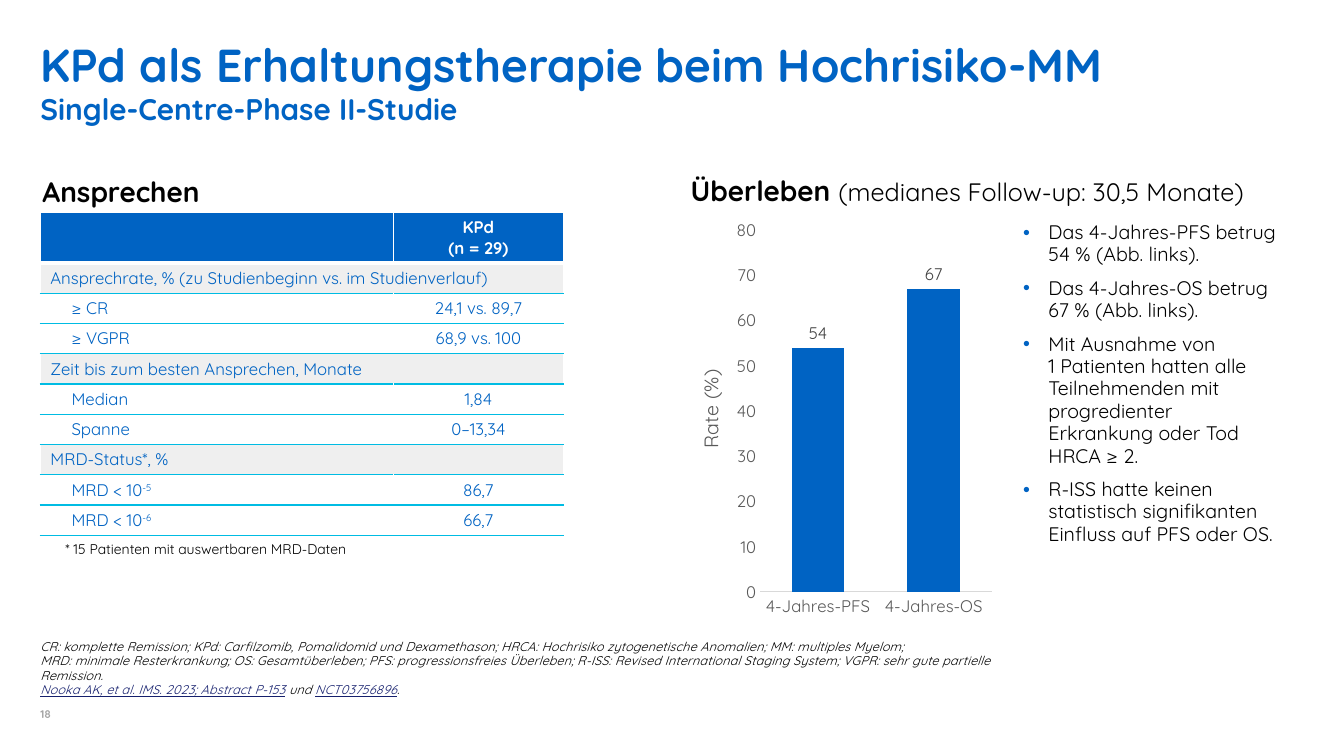
from dataclasses import dataclass

from lxml import etree
from pptx import Presentation
from pptx.chart.data import CategoryChartData
from pptx.dml.color import RGBColor
from pptx.enum import chart as ch, text as t
from pptx.oxml import parse_xml
from pptx.oxml.ns import nsdecls, qn
from pptx.util import Inches, Pt


@dataclass(frozen=True)
class Theme:
    font: str = "Quicksand"
    blue: str = "0063C3"
    cyan: str = "00BCE3"
    link: str = "151F6D"
    black: str = "000000"
    white: str = "FFFFFF"
    band: str = "EFEFEF"
    rule: str = "7F7F7F"
    axis: str = "595959"
    axis_line: str = "D9D9D9"
    label: str = "404040"
    number: str = "A6A6A6"
    title: float = 33
    subtitle: float = 21.3
    heading: float = 20
    heading_note: float = 18
    body: float = 14
    small: float = 12
    note: float = 10
    footnote: float = 9
    page: float = 8


TH = Theme()

RESPONSE = [
    ("Ansprechrate, % (zu Studienbeginn vs. im Studienverlauf)",),
    ("≥ CR", "24,1 vs. 89,7"),
    ("≥ VGPR", "68,9 vs. 100"),
    ("Zeit bis zum besten Ansprechen, Monate",),
    ("Median", "1,84"),
    ("Spanne", "0–13,34"),
    ("MRD-Status*, %",),
    ("MRD < 10^-5", "86,7"),
    ("MRD < 10^-6", "66,7"),
]
FINDINGS = [
    "Das 4-Jahres-PFS betrug 54 % (Abb. links).",
    "Das 4-Jahres-OS betrug 67 % (Abb. links).",
    "Mit Ausnahme von\n1 Patienten hatten alle Teilnehmenden mit progredienter "
    "Erkrankung oder Tod HRCA ≥ 2.",
    "R-ISS hatte keinen statistisch signifikanten Einfluss auf PFS oder OS.",
]
ABBREVIATIONS = (
    "CR: komplette Remission; KPd: Carfilzomib, Pomalidomid und Dexamethason; "
    "HRCA: Hochrisiko zytogenetische Anomalien; MM: multiples Myelom;\n"
    "MRD: minimale Resterkrankung; OS: Gesamtüberleben; PFS: progressionsfreies "
    "Überleben; R-ISS: Revised International Staging System; "
    "VGPR: sehr gute partielle Remission."
)


def style(font, size, color, bold=False):
    font.name, font.size, font.bold = TH.font, Pt(size), bold
    font.color.rgb = RGBColor.from_string(color)


def write(p, content, size, color=TH.black, bold=False):
    """Append text to a paragraph, with line breaks, and return its runs."""
    runs = []
    for i, line in enumerate(content.split("\n")):
        if i:
            p.add_line_break()
        r = p.add_run()
        r.text = line
        style(r.font, size, color, bold)
        runs.append(r)
    return runs


def text_box(s, at, anchor=t.MSO_ANCHOR.TOP, inset=(0, 0), wrap=True):
    tf = s.shapes.add_textbox(*map(Inches, at)).text_frame
    tf.word_wrap, tf.vertical_anchor = wrap, anchor
    tf.margin_left = tf.margin_right = Inches(inset[0])
    tf.margin_top = tf.margin_bottom = Inches(inset[1])
    return tf


def add_title(s):
    p = text_box(s, (0.4, 0.4, 12.53, 0.91)).paragraphs[0]
    p.line_spacing = 0.95
    write(p, "KPd als Erhaltungstherapie beim Hochrisiko-MM", TH.title, TH.blue, True)
    p.add_line_break()
    write(p, "Single-Centre-Phase II-Studie", TH.subtitle, TH.blue, True)


def add_heading(s, at, heading, note=""):
    p = text_box(s, at, t.MSO_ANCHOR.MIDDLE, (0.13, 0.07), False).paragraphs[0]
    write(p, heading, TH.heading, bold=True)
    if note:
        write(p, note, TH.heading_note)


def set_borders(cell, **edges):
    """Draw cell edges, given in the order L, R, T, B as (colour, points)."""
    tc_pr = cell._tc.get_or_add_tcPr()
    for edge, (color, width) in edges.items():
        tc_pr.append(parse_xml(
            f'<a:ln{edge} {nsdecls("a")} w="{Pt(width)}"><a:solidFill>'
            f'<a:srgbClr val="{color}"/></a:solidFill></a:ln{edge}>'))


def fill_cell(cell, color=None):
    cell.vertical_anchor = t.MSO_ANCHOR.MIDDLE
    cell.margin_top = cell.margin_bottom = Inches(0.04)
    if color:
        cell.fill.solid()
        cell.fill.fore_color.rgb = RGBColor.from_string(color)
    else:
        cell.fill.background()


def add_response_table(s):
    frame = s.shapes.add_table(len(RESPONSE) + 1, 2, Inches(0.4), Inches(2.11),
                               Inches(5.19), Inches(3.2))
    tbl = frame.table
    tbl.horz_banding = False
    for col, width in zip(tbl.columns, (3.5, 1.69)):
        col.width = Inches(width)
    for i, row in enumerate(tbl.rows):
        row.height = Inches(0.3 if i else 0.5)

    thin, thick, line = (TH.white, 1), (TH.white, 3), (TH.cyan, 1)
    for cell in tbl.rows[0].cells:
        set_borders(cell, L=thin, R=thin, T=thin, B=thick)
        fill_cell(cell, TH.blue)
    tf = tbl.cell(0, 1).text_frame
    tf.text = "KPd\n(n = 29)"
    for p in tf.paragraphs:
        p.alignment = t.PP_ALIGN.CENTER
        style(p.runs[0].font, TH.small, TH.white, True)

    for i, (label, *value) in enumerate(RESPONSE, 1):
        name, result = tbl.rows[i].cells
        top = line if i > 1 else thick
        middle = {"R": (TH.rule, 0.75)} if value else {}
        set_borders(name, **middle, T=top, B=line)
        set_borders(result, T=top, B=line)
        for cell in (name, result):
            fill_cell(cell, None if value else TH.band)
        p = name.text_frame.paragraphs[0]
        base, _, exponent = label.partition("^")
        write(p, base, TH.small, TH.blue)
        if exponent:
            r = write(p, exponent, TH.small, TH.blue)[0]
            r.font._element.set("baseline", "30000")
        if value:
            p._p.get_or_add_pPr().set("marL", str(Inches(0.21)))
            p = result.text_frame.paragraphs[0]
            p.alignment = t.PP_ALIGN.CENTER
            write(p, value[0], TH.small, TH.blue)
        else:
            name.merge(result)


def layout_xml(**values):
    """Manual chart layout; a width makes it the inner plot area."""
    target = '<c:layoutTarget val="inner"/>' if "w" in values else ""
    modes = '<c:xMode val="edge"/><c:yMode val="edge"/>'
    parts = "".join(f'<c:{k} val="{v}"/>' for k, v in values.items())
    return parse_xml(f'<c:layout {nsdecls("c")}><c:manualLayout>{target}{modes}'
                     f'{parts}</c:manualLayout></c:layout>')


def add_survival_chart(s):
    data = CategoryChartData()
    data.categories = ["4-Jahres-PFS", "4-Jahres-OS"]
    data.add_series("Rate (%)", (54, 67))
    chart = s.shapes.add_chart(ch.XL_CHART_TYPE.COLUMN_CLUSTERED, Inches(6.71),
                               Inches(2.12), Inches(3.19), Inches(4.08), data).chart
    chart.has_legend = chart.has_title = False
    style(chart.font, TH.small, TH.axis)

    plot = chart.plots[0]
    plot.gap_width, plot.overlap, plot.vary_by_categories = 120, -27, False
    fill = plot.series[0].format.fill
    fill.solid()
    fill.fore_color.rgb = RGBColor.from_string(TH.blue)
    plot.has_data_labels = True
    labels = plot.data_labels
    labels.show_value, labels.position = True, ch.XL_LABEL_POSITION.OUTSIDE_END
    style(labels.font, TH.small, TH.label)

    cat, val = chart.category_axis, chart.value_axis
    for axis in (cat, val):
        axis.major_tick_mark = axis.minor_tick_mark = ch.XL_TICK_MARK.NONE
        axis.has_major_gridlines = False
        style(axis.tick_labels.font, TH.small, TH.axis)
    cat.format.line.color.rgb = RGBColor.from_string(TH.axis_line)
    cat.format.line.width = Pt(0.75)
    val.format.line.fill.background()
    val.minimum_scale, val.maximum_scale, val.major_unit = 0, 80, 10
    title = val.axis_title
    write(title.text_frame.paragraphs[0], "Rate (%)", TH.body, TH.axis)

    area = chart._chartSpace.chart.plotArea
    title_xml = title._element
    for parent, layout in ((area, layout_xml(x=0.26, y=0.04, w=0.72, h=0.88)),
                           (title_xml, layout_xml(x=0.05, y=0.37))):
        for old in parent.findall(qn("c:layout")):
            parent.remove(old)
        parent.insert(0 if parent is area else 1, layout)


def add_findings(s):
    tf = text_box(s, (10.05, 2.15, 2.74, 3.5), inset=(0.1, 0.05))
    for i, finding in enumerate(FINDINGS):
        p = tf.add_paragraph() if i else tf.paragraphs[0]
        p.line_spacing, p.space_after = 0.95, Pt(8)
        p_pr = p._p.get_or_add_pPr()
        p_pr.set("marL", str(Inches(0.25)))
        p_pr.set("indent", str(-Inches(0.25)))
        color = etree.SubElement(p_pr, qn("a:buClr"))
        etree.SubElement(color, qn("a:srgbClr"), val=TH.blue)
        etree.SubElement(p_pr, qn("a:buFont"), typeface="Arial")
        etree.SubElement(p_pr, qn("a:buChar"), char="•")
        write(p, finding, TH.body)


def add_footnotes(s):
    p = text_box(s, (0.55, 5.31, 5.76, 0.27), inset=(0.1, 0.05)).paragraphs[0]
    write(p, "* 15 Patienten mit auswertbaren MRD-Daten", TH.note)

    tf = text_box(s, (0.4, 6.38, 9.64, 0.54), t.MSO_ANCHOR.BOTTOM)
    write(tf.paragraphs[0], ABBREVIATIONS, TH.footnote)
    sources = tf.add_paragraph()
    for content, is_link in (("Nooka AK, et al. IMS. 2023; Abstract P-153", True),
                             (" und ", False), ("NCT03756896", True), (".", False)):
        r = write(sources, content, TH.footnote, TH.link if is_link else TH.black)[0]
        r.font.underline = is_link
    for p in tf.paragraphs:
        p.line_spacing = 0.95
        for r in p.runs:
            r.font.italic = True
            r.font._element.set("spc", "10")

    p = text_box(s, (0.4, 6.92, 0.45, 0.23), t.MSO_ANCHOR.BOTTOM).paragraphs[0]
    write(p, "18", TH.page, TH.number, True)


def main():
    prs = Presentation()
    prs.slide_width, prs.slide_height = Inches(13.33), Inches(7.5)
    s = prs.slides.add_slide(prs.slide_layouts[6])
    add_title(s)
    add_heading(s, (0.29, 1.66, 1.92, 0.47), "Ansprechen")
    add_heading(s, (6.72, 1.65, 6.08, 0.47), "Überleben ",
                "(medianes Follow-up: 30,5 Monate)")
    add_response_table(s)
    add_survival_chart(s)
    add_findings(s)
    add_footnotes(s)
    prs.save("out.pptx")


if __name__ == "__main__":
    main()
